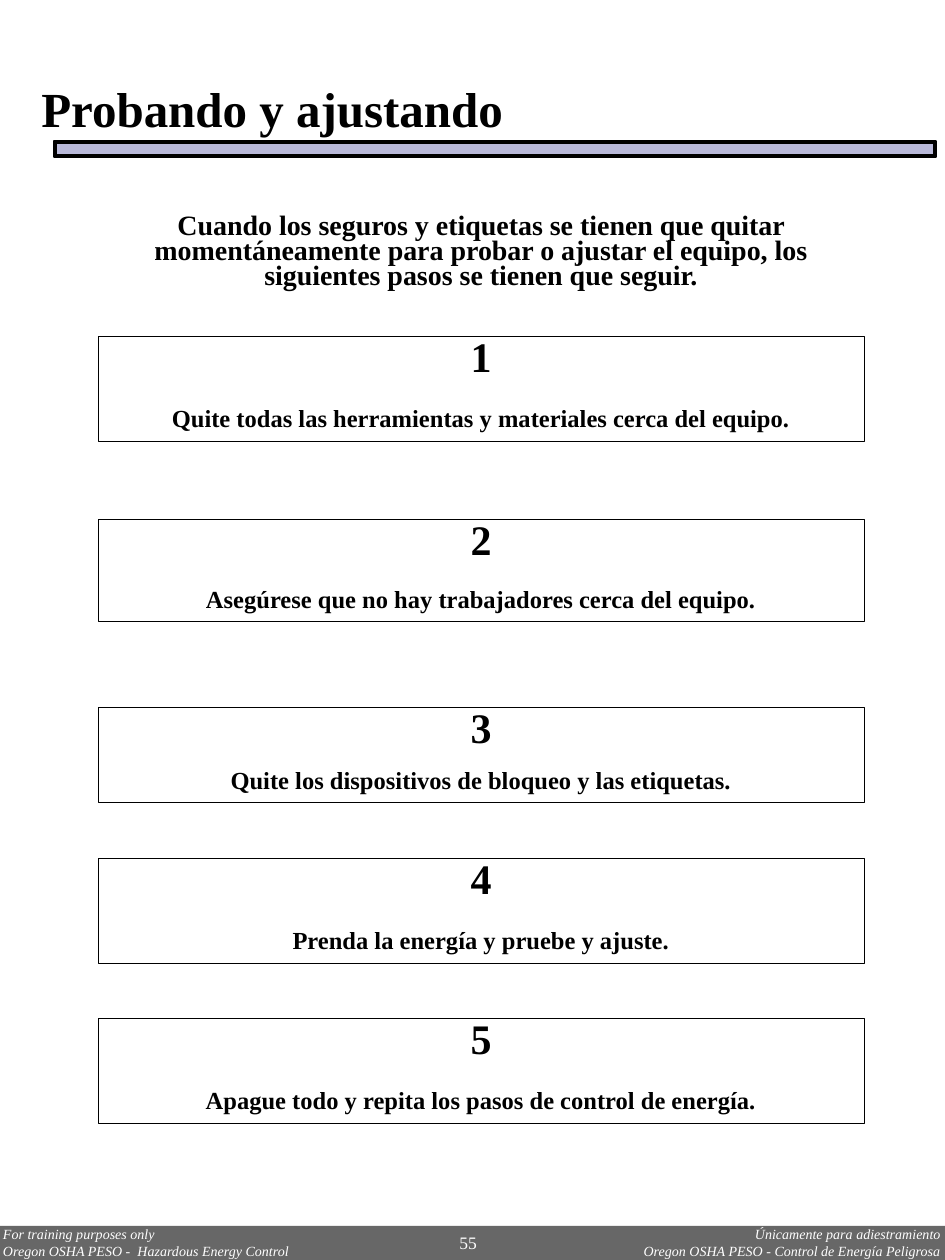
from dataclasses import dataclass

from pptx import Presentation
from pptx.dml.color import RGBColor
from pptx.enum.shapes import MSO_SHAPE
from pptx.enum.text import MSO_ANCHOR, PP_ALIGN
from pptx.util import Emu, Pt

RECTANGLE, BEVEL = MSO_SHAPE.RECTANGLE, MSO_SHAPE.BEVEL
LEFT, CENTER, RIGHT = PP_ALIGN.LEFT, PP_ALIGN.CENTER, PP_ALIGN.RIGHT
TOP = MSO_ANCHOR.TOP

# Content
TITLE = "Probando y ajustando"
INTRO = (
    "Cuando los seguros y etiquetas se tienen que quitar momentáneamente para "
    "probar o ajustar el equipo, los siguientes pasos se tienen que seguir."
)
# Each step: text, top px, height px, gap above the text in points, line spacing
STEPS = [
    ("Quite todas las herramientas y materiales cerca del equipo.", 336, 105, 17.25, 0.75),
    ("Asegúrese que no hay trabajadores cerca del equipo.", 519, 102, 12, 1),
    ("Quite los dispositivos de bloqueo y las etiquetas.", 707, 95, 12, 0.75),
    ("Prenda la energía y pruebe y ajuste.", 858, 105, 17.25, 0.75),
    ("Apague todo y repita los pasos de control de energía.", 1018, 105, 17.25, 0.75),
]
# Each footer: lines, left px, width px, alignment
FOOTERS = [
    (["For training purposes only",
      "Oregon OSHA PESO -  Hazardous Energy Control"], 3, 421, LEFT),
    (["Únicamente para adiestramiento",
      "Oregon OSHA PESO - Control de Energía Peligrosa"], 513, 428, RIGHT),
]
PAGE_NUMBER = "55"

# Geometry in px
SCALE = 914400 // 126
SLIDE_WIDTH, SLIDE_HEIGHT = 945, 1260
COLUMN_LEFT, COLUMN_WIDTH = 98, 766
FOOTER_HEIGHT = 34
FOOTER_TOP = SLIDE_HEIGHT - FOOTER_HEIGHT


@dataclass(frozen=True)
class Theme:
    font: str = "Times New Roman"
    ink: RGBColor = RGBColor(0, 0, 0)
    paper: RGBColor = RGBColor(255, 255, 255)
    bar: RGBColor = RGBColor(0xB9, 0xB9, 0xD9)
    footer: RGBColor = RGBColor(0x67, 0x67, 0x67)
    title_size: float = 28
    number_size: float = 24
    intro_size: float = 16
    step_size: float = 14
    page_size: float = 10
    footer_size: float = 8


THEME = Theme()


def px(*lengths):
    return [Emu(length * SCALE) for length in lengths]


def add_box(slide, kind, box, fill=None, line=None, line_width=1):
    shape = slide.shapes.add_shape(kind, *px(*box))
    shape.shadow.inherit = False
    if fill is None:
        shape.fill.background()
    else:
        shape.fill.solid()
        shape.fill.fore_color.rgb = fill
    if line is None:
        shape.line.fill.background()
    else:
        shape.line.color.rgb = line
        shape.line.width = Pt(line_width)
    return shape


def write(shape, lines, align=LEFT, color=THEME.ink, inset=None):
    """Write lines of (text, size, font formats, paragraph formats)."""
    frame = shape.text_frame
    frame.word_wrap = True
    frame.vertical_anchor = TOP
    if inset is not None:
        for side in ("left", "top", "right", "bottom"):
            setattr(frame, f"margin_{side}", inset)
    for index, (text, size, font_formats, paragraph_formats) in enumerate(lines):
        paragraph = frame.add_paragraph() if index else frame.paragraphs[0]
        for name, value in {"alignment": align, **paragraph_formats}.items():
            setattr(paragraph, name, value)
        run = paragraph.add_run()
        run.text = text
        formats = {"name": THEME.font, "size": Pt(size), **font_formats}
        for name, value in formats.items():
            setattr(run.font, name, value)
        run.font.color.rgb = color


def add_text(slide, box, lines, **options):
    write(slide.shapes.add_textbox(*px(*box)), lines, **options)


def main():
    presentation = Presentation()
    presentation.slide_width, presentation.slide_height = px(SLIDE_WIDTH, SLIDE_HEIGHT)
    slide = presentation.slides.add_slide(presentation.slide_layouts[6])
    bold, italic, tight = {"bold": True}, {"italic": True}, {"line_spacing": 0.75}

    # Footer
    add_box(slide, RECTANGLE, (0, FOOTER_TOP, SLIDE_WIDTH, FOOTER_HEIGHT), THEME.footer)
    for texts, left, width, align in FOOTERS:
        lines = [(text, THEME.footer_size, italic, {}) for text in texts]
        add_text(slide, (left, FOOTER_TOP, width, FOOTER_HEIGHT), lines,
                 align=align, color=THEME.paper, inset=0)
    add_text(slide, (447, FOOTER_TOP, 69, FOOTER_HEIGHT),
             [(PAGE_NUMBER, THEME.page_size, {}, {})], color=THEME.paper)

    # Title and its bar
    add_text(slide, (29, 72, 895, 72), [(TITLE, THEME.title_size, bold, {})])
    bar = add_box(slide, BEVEL, (54, 141, 882, 16), THEME.bar, THEME.ink)
    bar.adjustments[0] = 0.125

    # Introduction
    add_text(slide, (COLUMN_LEFT, 209, COLUMN_WIDTH, 88),
             [(INTRO, THEME.intro_size, bold, tight)], align=CENTER)

    # Numbered steps
    for number, (text, top, height, gap, spacing) in enumerate(STEPS, start=1):
        step = add_box(slide, RECTANGLE, (COLUMN_LEFT, top, COLUMN_WIDTH, height),
                       line=THEME.ink, line_width=0.25)
        write(step, [
            (str(number), THEME.number_size, bold, tight),
            (text, THEME.step_size, bold,
             {"line_spacing": spacing, "space_before": Pt(gap)}),
        ], align=CENTER)

    presentation.save("out.pptx")


if __name__ == "__main__":
    main()
